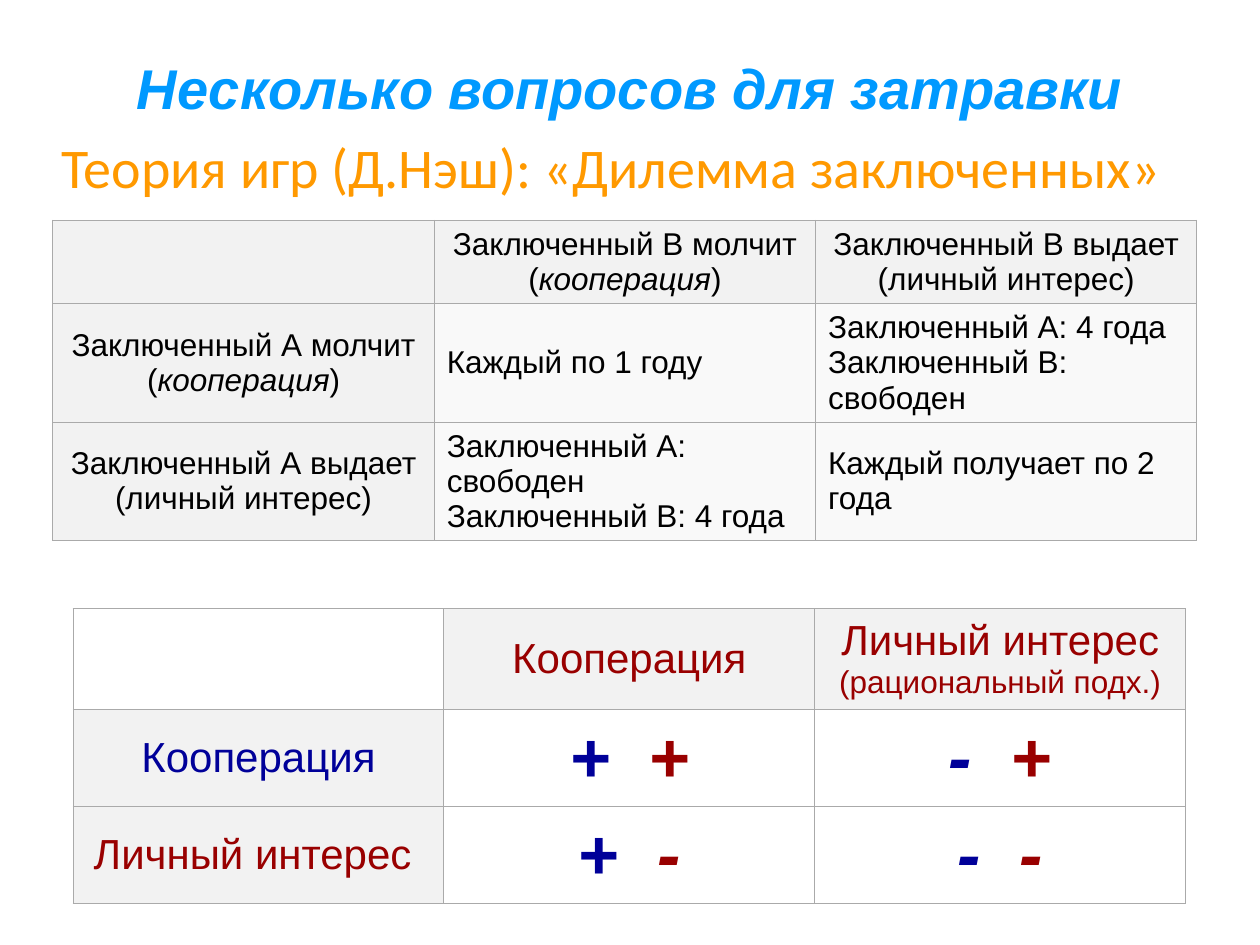
from dataclasses import dataclass

from lxml import etree
from pptx import Presentation
from pptx import util as u
from pptx.dml.color import RGBColor
from pptx.enum import text as t
from pptx.oxml import ns


@dataclass(frozen=True)
class Theme:
    title: str = "0099FF"
    subtitle: str = "FF9900"
    ink: str = "000000"
    first_player: str = "000099"
    second_player: str = "990000"
    header: str = "F2F2F2"
    body: str = "F9F9F9"
    border: str = "AAAAAA"
    border_width: float = 0.75
    heading_size: int = 32
    sign_size: int = 40
    strategy_size: int = 24
    small_size: int = 18


THEME = Theme()


@dataclass(frozen=True)
class Span:
    text: str
    size: int = THEME.small_size
    color: str = THEME.ink
    bold: bool = False
    italic: bool = False
    font: str = "Arial"


@dataclass(frozen=True)
class Cell:
    spans: tuple[Span, ...] = ()
    fill: str | None = None
    centered: bool = True


@dataclass(frozen=True)
class Grid:
    left: float
    top: float
    width: float
    row_heights: tuple[float, ...]
    rows: tuple[tuple[Cell, ...], ...]


def add_text(paragraph, text: str, *, size: int, color: str, bold: bool = False,
             italic: bool = False, font: str = "Arial") -> None:
    for index, line in enumerate(text.split("\n")):
        if index:
            paragraph.add_line_break()
        run = paragraph.add_run()
        run.text = line
        run.font.name = font
        run.font.size = u.Pt(size)
        run.font.bold = bold
        run.font.italic = italic
        run.font.color.rgb = RGBColor.from_string(color)


def add_borders(cell) -> None:
    properties = cell._tc.get_or_add_tcPr()
    for index, side in enumerate(("lnL", "lnR", "lnT", "lnB")):
        line = etree.Element(ns.qn(f"a:{side}"), w=str(u.Pt(THEME.border_width)))
        fill = etree.SubElement(line, ns.qn("a:solidFill"))
        etree.SubElement(fill, ns.qn("a:srgbClr"), val=THEME.border)
        properties.insert(index, line)


def fill_cell(cell, content: Cell) -> None:
    cell.vertical_anchor = t.MSO_ANCHOR.MIDDLE
    if content.fill:
        cell.fill.solid()
        cell.fill.fore_color.rgb = RGBColor.from_string(content.fill)
    else:
        cell.fill.background()
    add_borders(cell)
    paragraph = cell.text_frame.paragraphs[0]
    paragraph.alignment = t.PP_ALIGN.CENTER if content.centered else t.PP_ALIGN.LEFT
    for span in content.spans:
        add_text(paragraph, span.text, size=span.size, color=span.color,
                 bold=span.bold, italic=span.italic, font=span.font)


def add_grid(slide, grid: Grid) -> None:
    columns = len(grid.rows[0])
    table = slide.shapes.add_table(
        len(grid.rows), columns, u.Inches(grid.left), u.Inches(grid.top),
        u.Inches(grid.width), u.Inches(sum(grid.row_heights))).table
    table.first_row = False
    table.horz_banding = False
    for column in table.columns:
        column.width = u.Inches(grid.width / columns)
    for row_index, (height, row) in enumerate(zip(grid.row_heights, grid.rows)):
        table.rows[row_index].height = u.Inches(height)
        for column_index, content in enumerate(row):
            fill_cell(table.cell(row_index, column_index), content)


def header(text: str) -> Cell:
    return Cell((Span(text),), THEME.header)


def cooperation(text: str) -> Cell:
    return Cell((Span(f"{text} ("), Span("кооперация", italic=True), Span(")")),
                THEME.header)


def outcome(text: str) -> Cell:
    return Cell((Span(text),), THEME.body, centered=False)


def strategy(text: str, color: str, note: str = "") -> Cell:
    spans = (Span(text, THEME.strategy_size, color),)
    if note:
        spans += (Span(note, color=color),)
    return Cell(spans, THEME.header)


def signs(first: str, second: str) -> Cell:
    return Cell((
        Span(f"{first}  ", THEME.sign_size, THEME.first_player, True, True),
        Span(second, THEME.sign_size, THEME.second_player, True, True)))


SENTENCES = Grid(0.42, 1.75, 9.08, (0.66, 0.94, 0.94), (
    (Cell(fill=THEME.header), cooperation("Заключенный B молчит"),
     header("Заключенный B выдает (личный интерес)")),
    (cooperation("Заключенный А молчит"), outcome("Каждый по 1 году"),
     outcome("Заключенный A: 4 года\nЗаключенный B: свободен")),
    (header("Заключенный А выдает (личный интерес)"),
     outcome("Заключенный A: свободен\nЗаключенный B: 4 года"),
     outcome("Каждый получает по 2 года")),
))

PAYOFFS = Grid(0.58, 4.83, 8.83, (0.8, 0.77, 0.77), (
    (Cell(), strategy("Кооперация", THEME.second_player),
     strategy("Личный интерес ", THEME.second_player, "(рациональный подх.)")),
    (strategy("Кооперация", THEME.first_player), signs("+", "+"), signs("-", "+")),
    (strategy("Личный интерес ", THEME.second_player), signs("+", "-"), signs("-", "-")),
))


def main() -> None:
    presentation = Presentation()
    presentation.slide_width = u.Inches(10)
    presentation.slide_height = u.Inches(7.5)
    slide = presentation.slides.add_slide(presentation.slide_layouts[5])

    title = slide.shapes.title
    title.left, title.top = u.Inches(0.5), u.Inches(0.3)
    title.width, title.height = u.Inches(9), u.Inches(0.78)
    title.text_frame.vertical_anchor = t.MSO_ANCHOR.MIDDLE
    heading = title.text_frame.paragraphs[0]
    heading.alignment = t.PP_ALIGN.CENTER
    add_text(heading, "Несколько вопросов для затравки", size=THEME.heading_size,
             color=THEME.title, bold=True, italic=True)

    add_grid(slide, SENTENCES)

    subtitle = slide.shapes.add_textbox(
        u.Inches(0.39), u.Inches(1), u.Inches(9.61), u.Inches(1.17)).text_frame
    subtitle.word_wrap = True
    add_text(subtitle.paragraphs[0], "Теория игр (Д.Нэш): «Дилемма заключенных»",
             size=THEME.heading_size, color=THEME.subtitle, font="Calibri")

    add_grid(slide, PAYOFFS)
    presentation.save("out.pptx")


if __name__ == "__main__":
    main()
